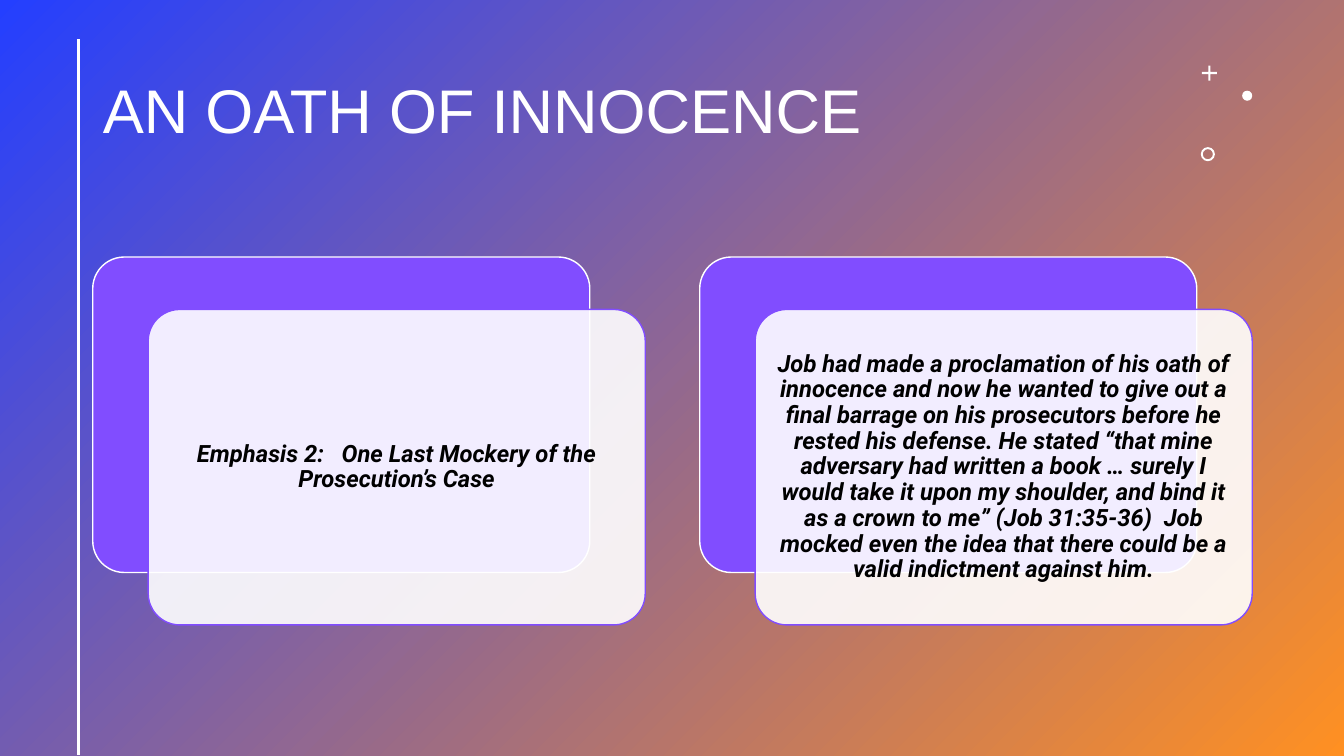
import pptx
import pptx.util
import pptx.dml.color
import pptx.enum.shapes
import pptx.enum.text
import pptx.oxml
import pptx.oxml.ns

Inches, Pt = pptx.util.Inches, pptx.util.Pt
SHAPE = pptx.enum.shapes.MSO_SHAPE
ALIGN = pptx.enum.text.PP_ALIGN
MIDDLE = pptx.enum.text.MSO_ANCHOR.MIDDLE
COLORS = {name: pptx.dml.color.RGBColor.from_string(value) for name, value in {
    "blue": "243FFF", "orange": "FF9022", "violet": "814DFF",
    "white": "FFFFFF", "black": "000000"}.items()}

# Card grid: one column per statement, the front card offset from the back one
LEFT, TOP = 0.92, 2.55
COLUMN_STEP = 6.02
CARD_WIDTH, CARD_HEIGHT = 4.93, 3.13
OFFSET_X, OFFSET_Y = 0.55, 0.52
TEXT_MARGIN = 0.09

STATEMENTS = [
    "Emphasis 2:   One Last Mockery of the Prosecution’s Case",
    "Job had made a proclamation of his oath of innocence and now he wanted to "
    "give out a final barrage on his prosecutors before he rested his defense. "
    "He stated “that mine adversary had written a book … surely I would take it "
    "upon my shoulder, and bind it as a crown to me” (Job 31:35-36)  Job mocked "
    "even the idea that there could be a valid indictment against him.",
]

deck = pptx.Presentation()
deck.slide_width, deck.slide_height = Inches(13.33), Inches(7.5)
page = deck.slides.add_slide(deck.slide_layouts[5])


def add_filled(kind, left, top, width, height, fill, line=None, adjust=None):
    """Add a preset shape with a flat fill and, if a line colour is given, a 1 pt outline."""
    shape = page.shapes.add_shape(
        kind, Inches(left), Inches(top), Inches(width), Inches(height))
    shape.shadow.inherit = False
    shape.fill.solid()
    shape.fill.fore_color.rgb = COLORS[fill]
    if line:
        shape.line.color.rgb = COLORS[line]
        shape.line.width = Pt(1)
    else:
        shape.line.fill.background()
    if adjust is not None:
        shape.adjustments[0] = adjust
    return shape


def style_text(frame, align, size, font, color):
    frame.word_wrap = True
    frame.vertical_anchor = MIDDLE
    para = frame.paragraphs[0]
    para.alignment = align
    para.line_spacing = 0.9
    span = para.runs[0]
    span.font.size = Pt(size)
    span.font.name = font
    span.font.color.rgb = COLORS[color]
    return para, span


# Backdrop, placed behind the title
backdrop = add_filled(SHAPE.RECTANGLE, 0, 0, 13.33, 7.5, "blue")
backdrop.fill.gradient()
backdrop.fill.gradient_angle = 315
for stop, color in zip(backdrop.fill.gradient_stops, ("blue", "orange")):
    stop.color.rgb = COLORS[color]

title = page.shapes.title
title.element.addprevious(backdrop.element)
title.left, title.top = Inches(LEFT), Inches(0.4)
title.width, title.height = Inches(10.72), Inches(1.45)
title.text_frame.text = "AN OATH OF INNOCENCE"
title.text_frame.auto_size = pptx.enum.text.MSO_AUTO_SIZE.NONE
style_text(title.text_frame, ALIGN.LEFT, 44, "Arial", "white")

# Vertical rule and the three small ornaments
rule = page.shapes.add_connector(
    pptx.enum.shapes.MSO_CONNECTOR.STRAIGHT,
    Inches(0.78), Inches(0.39), Inches(0.78), Inches(7.49))
rule.line.color.rgb = COLORS["white"]
rule.line.width = Pt(2)
rule.element.spPr.append(pptx.oxml.parse_xml(
    f"<a:effectLst {pptx.oxml.ns.nsdecls('a')}/>"))

for kind, left, top, size, adjust in (
        (SHAPE.CROSS, 11.92, 0.65, 0.15, 0.43),
        (SHAPE.OVAL, 12.32, 0.9, 0.1, None),
        (SHAPE.DONUT, 11.91, 1.46, 0.14, 0.14)):
    add_filled(kind, left, top, size, size, "white", adjust=adjust)

# Layered cards
for column, statement in enumerate(STATEMENTS):
    left = LEFT + column * COLUMN_STEP
    front_left, front_top = left + OFFSET_X, TOP + OFFSET_Y
    add_filled(SHAPE.ROUNDED_RECTANGLE, left, TOP, CARD_WIDTH, CARD_HEIGHT,
               "violet", "white", 0.1)
    front = add_filled(SHAPE.ROUNDED_RECTANGLE, front_left, front_top,
                       CARD_WIDTH, CARD_HEIGHT, "white", "violet", 0.1)
    front_fill = front.element.spPr.find(pptx.oxml.ns.qn("a:solidFill"))
    front_fill[0].append(pptx.oxml.parse_xml(
        f"<a:alpha {pptx.oxml.ns.nsdecls('a')} val='90000'/>"))

    box = page.shapes.add_textbox(
        Inches(front_left + TEXT_MARGIN), Inches(front_top + TEXT_MARGIN),
        Inches(CARD_WIDTH - 2 * TEXT_MARGIN), Inches(CARD_HEIGHT - 2 * TEXT_MARGIN))
    frame = box.text_frame
    frame.text = statement
    frame.margin_left = frame.margin_right = Inches(0.07)
    frame.margin_top = frame.margin_bottom = Inches(0.07)
    para, span = style_text(frame, ALIGN.CENTER, 17, "Roboto", "black")
    para.space_after = Pt(6)
    span.font.bold = span.font.italic = True

deck.save("out.pptx")
